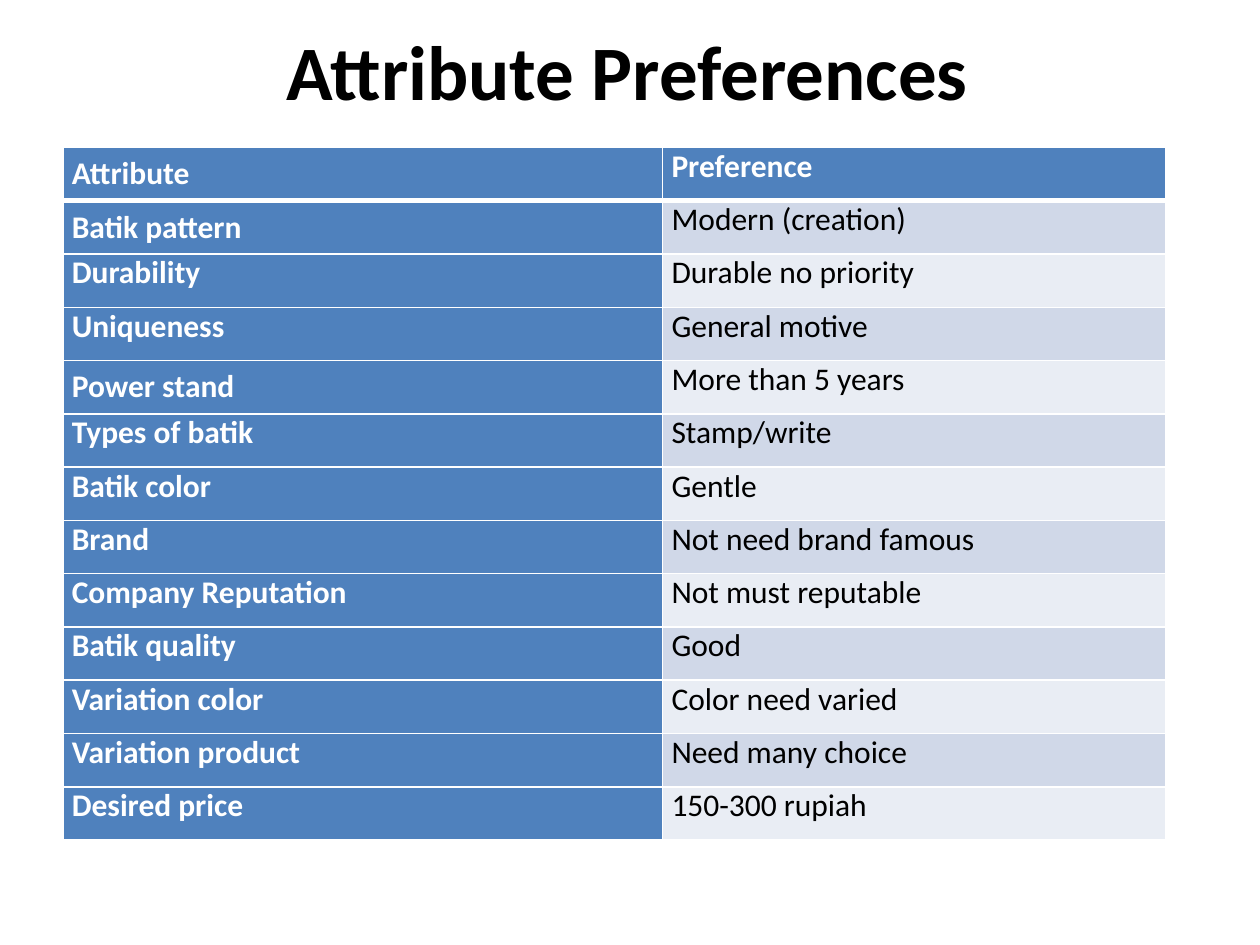
from lxml import etree
from pptx import Presentation
from pptx.dml.color import RGBColor
from pptx.enum.text import MSO_ANCHOR, PP_ALIGN
from pptx.oxml.ns import qn
from pptx.util import Inches, Pt

TOP, MIDDLE = MSO_ANCHOR.TOP, MSO_ANCHOR.MIDDLE
CENTER = PP_ALIGN.CENTER

FONT = "Calibri"
BLACK, WHITE, BLUE = "000000", "FFFFFF", "4F81BD"
BANDS = ("E9EDF4", "D0D8E8")
COLS = (4.76, 3.99)
HEIGHT = 5.5
MID_ROWS = (0, 1, 4)

ROWS = (
    ("Attribute", "Preference"),
    ("Batik pattern", "Modern (creation)"),
    ("Durability", "Durable no priority"),
    ("Uniqueness", "General motive"),
    ("Power stand", "More than 5 years"),
    ("Types of batik", "Stamp/write"),
    ("Batik color", "Gentle"),
    ("Brand", "Not need brand famous"),
    ("Company Reputation", "Not must reputable"),
    ("Batik quality", "Good"),
    ("Variation color", "Color need varied"),
    ("Variation product", "Need many choice"),
    ("Desired price", "150-300 rupiah"),
)


def color(code):
    return RGBColor.from_string(code)


def style(par, size, code, bold):
    font = par.font
    font.name, font.size, font.bold = FONT, Pt(size), bold
    font.color.rgb = color(code)


def add_title(slide, text):
    title = slide.shapes.title
    title.left, title.top = Inches(-0.02), Inches(-0.01)
    title.width, title.height = Inches(10), Inches(1.13)
    frame = title.text_frame
    frame.text = text
    frame.vertical_anchor = MIDDLE
    par = frame.paragraphs[0]
    par.alignment = CENTER
    style(par, 44, BLACK, True)


def add_edges(cell, top, bottom):
    """Draw white cell borders; top and bottom widths are in points."""
    props = cell._tc.get_or_add_tcPr()
    for tag, width in (("lnL", 1), ("lnR", 1), ("lnT", top), ("lnB", bottom)):
        line = etree.SubElement(props, qn("a:" + tag), w=str(Pt(width)))
        fill = etree.SubElement(line, qn("a:solidFill"))
        etree.SubElement(fill, qn("a:srgbClr"), val=WHITE)


def fill_cell(cell, text, row, col):
    strong = row == 0 or col == 0
    cell.text = text
    style(cell.text_frame.paragraphs[0], 18, WHITE if strong else BLACK, strong)
    cell.margin_left = cell.margin_right = Inches(0.07)
    cell.margin_top = cell.margin_bottom = 0
    cell.vertical_anchor = MIDDLE if col == 0 and row in MID_ROWS else TOP
    add_edges(cell, 3 if row == 1 else 1, 3 if row == 0 else 1)
    cell.fill.solid()
    cell.fill.fore_color.rgb = color(BLUE if strong else BANDS[row % 2])


def add_grid(slide):
    table = slide.shapes.add_table(
        len(ROWS), len(COLS), Inches(0.5), Inches(1.17),
        Inches(sum(COLS)), Inches(HEIGHT)).table
    for column, width in zip(table.columns, COLS):
        column.width = Inches(width)
    for row, texts in enumerate(ROWS):
        for col, text in enumerate(texts):
            fill_cell(table.cell(row, col), text, row, col)


def main():
    deck = Presentation()
    deck.slide_width, deck.slide_height = Inches(10), Inches(7.5)
    slide = deck.slides.add_slide(deck.slide_layouts[5])
    add_title(slide, "Attribute Preferences")
    add_grid(slide)
    deck.save("out.pptx")


if __name__ == "__main__":
    main()
